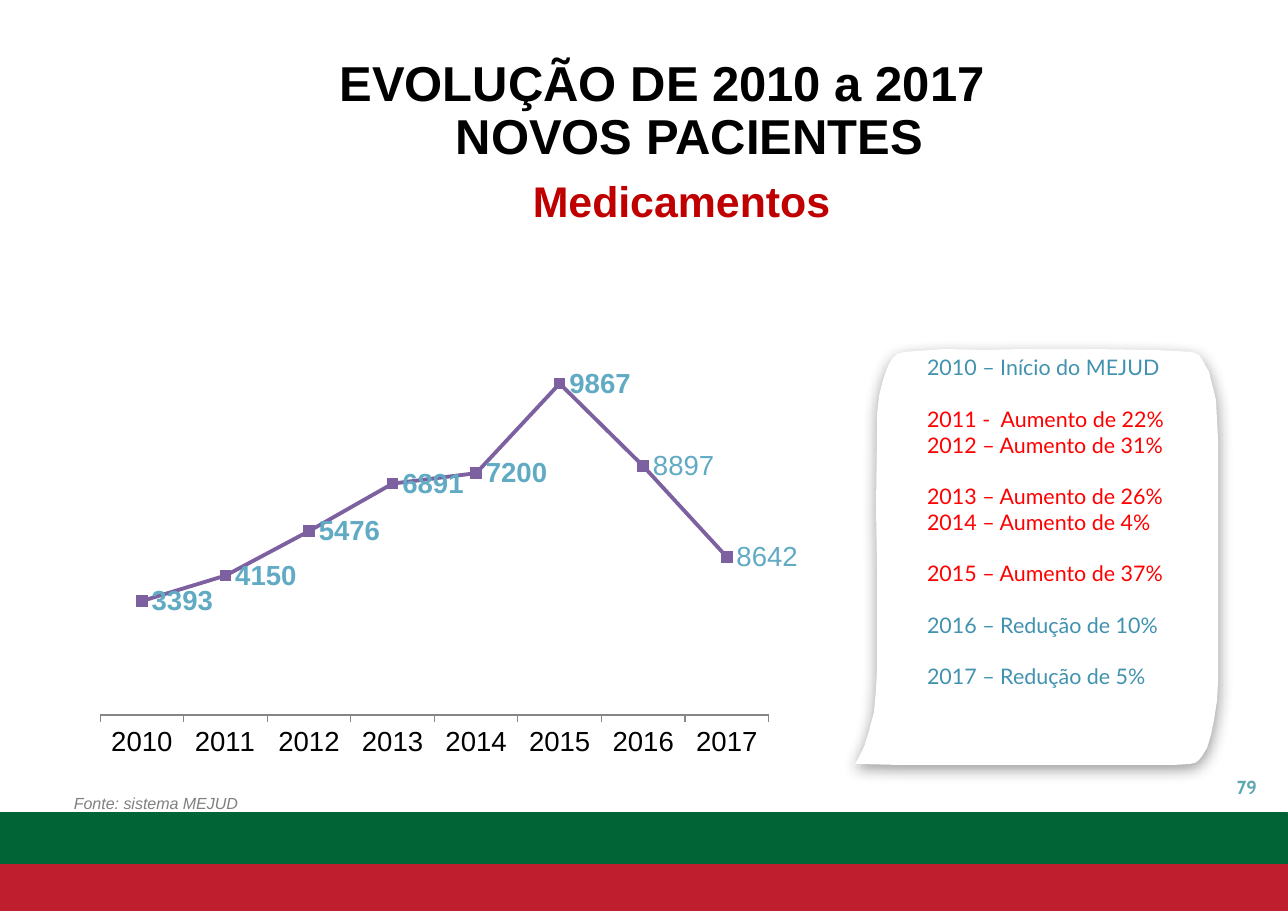
"""Build the slide on new patients by year, with a line chart and a note sheet."""
from pptx import Presentation
from pptx.chart.data import CategoryChartData
from pptx.dml.color import RGBColor
from pptx.enum.chart import XL_CHART_TYPE, XL_LABEL_POSITION, XL_MARKER_STYLE, XL_TICK_MARK
from pptx.enum.shapes import MSO_SHAPE
from pptx.enum.text import MSO_ANCHOR, MSO_AUTO_SIZE, PP_ALIGN
from pptx.oxml import parse_xml
from pptx.oxml.ns import nsdecls, qn
from pptx.util import Pt

PX = 8298
WIDE, HIGH = 1288, 911
HUES = {"black": "000000", "white": "FFFFFF", "green": "006436", "red": "BE1E2E",
        "dark": "C00000", "bright": "FF0000", "blue": "4192AF", "label": "60AAC4",
        "line": "7D60A0", "axis": "868686", "gray": "808080", "page": "5DA7AF"}
TITLE = ["EVOLUÇÃO DE 2010 a 2017", "NOVOS PACIENTES"]
BARS = [(861, "red"), (813, "green")]
DATA = {"2010": 3393, "2011": 4150, "2012": 5476, "2013": 6891,
        "2014": 7200, "2015": 9867, "2016": 7412, "2017": 4705}
SHOWN = {6: "8897", 7: "8642"}
PLOT = {"x": 0.034, "y": 0, "w": 0.78, "h": 0.89}
NOTES = [
    ("2010 – Início do MEJUD", "blue", 0),
    ("2011 -  Aumento de 22%", "bright", 1),
    ("2012 – Aumento de 31%", "bright", 0),
    ("2013 – Aumento de 26%", "bright", 1),
    ("2014 – Aumento de 4%", "bright", 0),
    ("2015 – Aumento de 37%", "bright", 1),
    ("2016 – Redução de 10%", "blue", 1),
    ("2017 – Redução de 5%", "blue", 1),
]
SHEET = [
    (856, 764), (901, 765), (947, 765), (1069, 765), (1174, 765), (1190, 764),
    (1195, 763), (1199, 760), (1202, 756), (1207, 748), (1211, 735), (1214, 720),
    (1217, 701), (1218, 682), (1218, 439), (1217, 419), (1216, 400), (1213, 388),
    (1209, 372), (1203, 361), (1199, 355), (1192, 352), (1156, 350), (1089, 349),
    (1023, 349), (986, 350), (944, 349), (904, 352), (897, 354), (892, 359),
    (888, 366), (883, 380), (879, 396), (877, 414), (877, 433), (876, 507),
    (877, 570), (877, 668), (876, 690), (874, 712), (869, 731), (864, 747),
    (858, 759), (855, 764),
]


def tint(name):
    return RGBColor.from_string(HUES[name])


def place(shape, left, top, width, height):
    shape.left, shape.top = left * PX, top * PX
    shape.width, shape.height = width * PX, height * PX


def paint(shape, fill, line=None):
    shape.shadow.inherit = False
    shape.fill.solid()
    shape.fill.fore_color.rgb = tint(fill)
    if line:
        shape.line.color.rgb = tint(line)
        shape.line.width = Pt(0.75)
    else:
        shape.line.fill.background()


def write(para, text, size=14, face="Arial", hue="black", bold=False,
          slant=False, align=PP_ALIGN.LEFT, before=0, space=1.0, inset=0):
    props = para._p.get_or_add_pPr()
    props.set("marL", str(inset * PX))
    props.set("indent", "0")
    para.alignment, para.line_spacing = align, space
    para.space_before, para.space_after = Pt(before), Pt(0)
    props.append(parse_xml(f"<a:buNone {nsdecls('a')}/>"))
    run = para.add_run()
    run.text = text
    font = run.font
    font.size, font.name, font.bold, font.italic = Pt(size), face, bold, slant
    font.color.rgb = tint(hue)


def label(slide, box, text, **style):
    shape = slide.shapes.add_textbox(*(n * PX for n in box))
    shape.text_frame.word_wrap = True
    write(shape.text_frame.paragraphs[0], text, **style)


def add_bars(slide):
    for top, hue in BARS:
        bar = slide.shapes.add_shape(MSO_SHAPE.RECTANGLE, 0, top * PX, WIDE * PX, 50 * PX)
        paint(bar, hue, hue)


def add_trend(slide):
    data = CategoryChartData()
    data.categories = list(DATA)
    data.add_series("Série 1", list(DATA.values()))
    box = (n * PX for n in (71, 312, 857, 453))
    chart = slide.shapes.add_chart(XL_CHART_TYPE.LINE_MARKERS_STACKED, *box, data).chart
    chart.has_legend = chart.has_title = False
    chart.font.size, chart.font.name = Pt(18), "Arial"
    chart.font.color.rgb = tint("black")

    years, values = chart.category_axis, chart.value_axis
    years.has_major_gridlines = values.has_major_gridlines = False
    years.major_tick_mark = XL_TICK_MARK.OUTSIDE
    years.format.line.color.rgb = tint("axis")
    values.visible = False
    values.minimum_scale, values.maximum_scale = 0, 12000

    plot = chart.plots[0]
    plot.vary_by_categories = False
    line = plot.series[0]
    line.smooth = False
    line.format.line.color.rgb = tint("line")
    line.format.line.width = Pt(2.5)
    mark = line.marker
    mark.style, mark.size = XL_MARKER_STYLE.SQUARE, 7
    mark.format.fill.solid()
    mark.format.fill.fore_color.rgb = tint("line")
    mark.format.line.color.rgb = tint("line")

    tags = line.data_labels
    tags.show_value, tags.position = True, XL_LABEL_POSITION.RIGHT
    tags.font.size, tags.font.name, tags.font.bold = Pt(18), "Arial", True
    tags.font.color.rgb = tint("label")
    for spot, text in SHOWN.items():
        tag = line.points[spot].data_label
        write(tag.text_frame.paragraphs[0], text, size=18, hue="label")
        tag.position = XL_LABEL_POSITION.RIGHT

    area = chart._chartSpace.find(".//" + qn("c:plotArea"))
    for old in area.findall(qn("c:layout")):
        area.remove(old)
    modes = "".join(f'<c:{k}Mode val="edge"/>' for k in "xy")
    sizes = "".join(f'<c:{k} val="{v}"/>' for k, v in PLOT.items())
    area.insert(0, parse_xml(
        f'<c:layout {nsdecls("c")}><c:manualLayout><c:layoutTarget val="inner"/>'
        f"{modes}{sizes}</c:manualLayout></c:layout>"))


def add_sheet(slide):
    pen = slide.shapes.build_freeform(*SHEET[0], scale=PX)
    pen.add_line_segments(SHEET[1:], close=True)
    sheet = pen.convert_to_shape()
    paint(sheet, "white")
    sheet._element.spPr.find(qn("a:effectLst")).append(parse_xml(
        f'<a:outerShdw {nsdecls("a")} blurRad="{Pt(10)}" dist="{Pt(3)}" dir="5400000">'
        f'<a:srgbClr val="{HUES["black"]}"><a:alpha val="40000"/></a:srgbClr></a:outerShdw>'))


def add_notes(body):
    body.element.getparent().append(body.element)
    place(body, 916, 349, 353, 426)
    frame = body.text_frame
    frame.auto_size, frame.vertical_anchor = MSO_AUTO_SIZE.NONE, MSO_ANCHOR.TOP
    for i, (text, hue, gap) in enumerate(NOTES):
        para = frame.add_paragraph() if i else frame.paragraphs[0]
        write(para, text, face="Lato", hue=hue, before=16.8 * gap)


def add_title(title):
    place(title, 256, 36, 813, 152)
    frame = title.text_frame
    frame.auto_size, frame.vertical_anchor = MSO_AUTO_SIZE.NONE, MSO_ANCHOR.MIDDLE
    frame.margin_left = frame.margin_right = frame.margin_top = frame.margin_bottom = 0
    for i, text in enumerate(TITLE):
        para = frame.add_paragraph() if i else frame.paragraphs[0]
        write(para, text, size=32, bold=True, align=PP_ALIGN.CENTER, space=0.9, inset=54 * i)


def main():
    deck = Presentation()
    deck.slide_width, deck.slide_height = WIDE * PX, HIGH * PX
    slide = deck.slides.add_slide(deck.slide_layouts[1])
    add_bars(slide)
    add_trend(slide)
    add_sheet(slide)
    label(slide, (1081, 770, 187, 35), "79", size=12.3, face="Cabin", hue="page",
          bold=True, align=PP_ALIGN.RIGHT)
    label(slide, (49, 788, 200, 31), "Fonte: sistema MEJUD", size=10.5, hue="gray",
          slant=True, align=PP_ALIGN.RIGHT)
    add_notes(slide.placeholders[1])
    label(slide, (499, 169, 347, 63), "Medicamentos", size=28, hue="dark",
          bold=True, inset=23)
    add_title(slide.shapes.title)
    deck.save("out.pptx")


if __name__ == "__main__":
    main()
